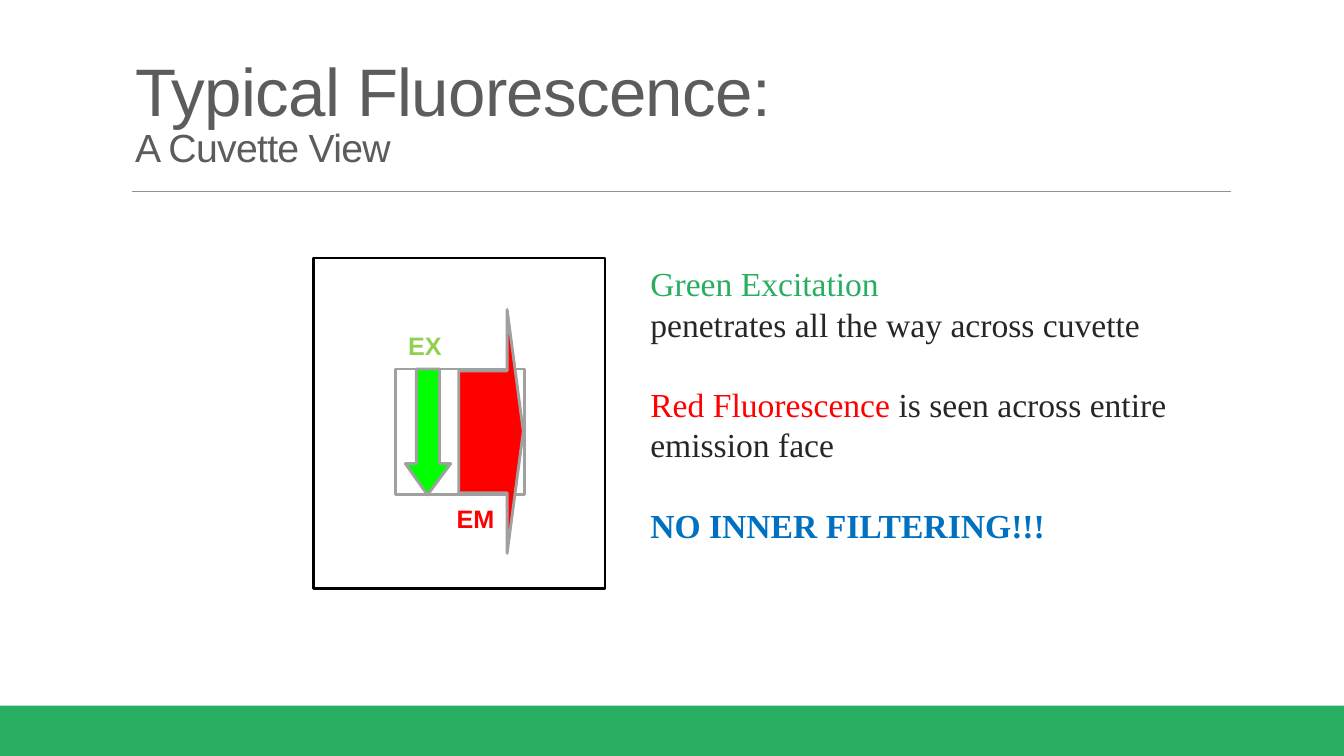
"""Build the cuvette slide on ordinary right-angle fluorescence."""
from dataclasses import dataclass

from lxml.etree import SubElement
from pptx import Presentation
from pptx.dml.color import RGBColor
from pptx.enum.shapes import MSO_CONNECTOR as Connector, MSO_SHAPE as Preset
from pptx.enum.text import MSO_ANCHOR as Anchor, MSO_AUTO_SIZE as AutoSize, PP_ALIGN as Align
from pptx.oxml.ns import qn
from pptx.util import Inches, Pt

SANS, SERIF = "Arial", "Times New Roman"
GREEN, RED, BLUE, INK = "27AE61", "FF0000", "0070C0", "262626"
TITLE_GREY, EDGE_GREY = "5C5C5C", "A0A0A0"
LINE_PITCH = 28.8


@dataclass
class Rect:
    left: float
    top: float
    width: float
    height: float

    def lengths(self) -> list:
        return [Inches(v) for v in (self.left, self.top, self.width, self.height)]


@dataclass
class Arrow:
    points: list[tuple[float, float]]
    fill: str


@dataclass
class Label:
    text: str
    left: float
    top: float
    color: str


@dataclass
class Span:
    text: str
    color: str = INK
    bold: bool = False


@dataclass
class Line:
    spans: list[Span]
    gap: float = 0


ARROWS = [
    Arrow([(4.02, 4.6), (4.13, 4.6), (4.13, 3.66), (4.36, 3.66),
           (4.36, 4.6), (4.47, 4.6), (4.24, 4.91)], "00FF00"),
    Arrow([(5.03, 5.49), (5.03, 4.89), (4.55, 4.89), (4.55, 3.68),
           (5.03, 3.68), (5.03, 3.07), (5.19, 4.28)], RED),
]
LABELS = [Label("EX", 3.95, 3.23, "92D050"), Label("EM", 4.43, 4.94, RED)]
LINES = [
    Line([Span("Green Excitation", GREEN)]),
    Line([Span("penetrates all the way across cuvette")]),
    Line([Span("Red Fluorescence", RED), Span(" is seen across entire")], LINE_PITCH),
    Line([Span("emission face")]),
    Line([Span("NO INNER FILTERING!!!", BLUE, True)], LINE_PITCH),
]


def rgb(color: str) -> RGBColor:
    return RGBColor.from_string(color)


def paint(shape, fill: str | None, edge: str | None) -> None:
    shape.shadow.inherit = False
    if fill:
        shape.fill.solid()
        shape.fill.fore_color.rgb = rgb(fill)
    else:
        shape.fill.background()
    if edge:
        shape.line.color.rgb = rgb(edge)
        shape.line.width = Pt(2)
    else:
        shape.line.fill.background()


def add_rect(shapes, rect: Rect, fill: str | None, edge: str | None) -> None:
    paint(shapes.add_shape(Preset.RECTANGLE, *rect.lengths()), fill, edge)


def add_arrow(shapes, arrow: Arrow) -> None:
    start, *rest = [(Inches(x), Inches(y)) for x, y in arrow.points]
    builder = shapes.build_freeform(*start)
    builder.add_line_segments(rest, close=True)
    paint(builder.convert_to_shape(), arrow.fill, EDGE_GREY)


def add_label(shapes, label: Label) -> None:
    box = shapes.add_textbox(*Rect(label.left, label.top, 0.75, 0.4).lengths())
    box.text_frame.word_wrap = True
    box.text_frame.auto_size = AutoSize.SHAPE_TO_FIT_TEXT
    para = box.text_frame.paragraphs[0]
    para.text = label.text
    set_font(para.font, SANS, 18, label.color)
    para.font.bold = True


def set_font(font, name: str, size: float, color: str) -> None:
    font.name, font.size = name, Pt(size)
    font.color.rgb = rgb(color)


def place(box, rect: Rect, anchor: Anchor):
    box.left, box.top, box.width, box.height = rect.lengths()
    frame = box.text_frame
    frame.word_wrap = True
    frame.auto_size = AutoSize.NONE
    frame.vertical_anchor = anchor
    return frame


def fill_title(box) -> None:
    para = place(box, Rect(1.24, 0.16, 11.45, 1.58), Anchor.BOTTOM).paragraphs[0]
    para.alignment = Align.LEFT
    para.line_spacing = 0.85
    set_font(para.font, SANS, 48, TITLE_GREY)
    for index, (text, size) in enumerate([("Typical Fluorescence:", 48), ("A Cuvette View", 28)]):
        if index:
            para.add_line_break()
        run = para.add_run()
        run.text = text
        run.font.size = Pt(size)
        run.font._element.set("spc", "-50")


def fill_body(box) -> None:
    frame = place(box, Rect(6.35, 2.56, 6.01, 3.28), Anchor.TOP)
    for index, line in enumerate(LINES):
        para = frame.add_paragraph() if index else frame.paragraphs[0]
        para.line_spacing = Pt(LINE_PITCH)
        para.space_before = Pt(line.gap)
        properties = para._p.get_or_add_pPr()
        properties.set("marL", str(Inches(0.38)))
        properties.set("indent", str(-Inches(0.38)))
        SubElement(properties, qn("a:buNone"))
        para.font.name, para.font.size = SERIF, Pt(24)
        for span in line.spans:
            run = para.add_run()
            run.text = span.text
            run.font.bold = span.bold
            run.font.color.rgb = rgb(span.color)


def add_rule(shapes) -> None:
    rule = shapes.add_connector(Connector.STRAIGHT, Inches(1.31), Inches(1.9),
                                Inches(12.21), Inches(1.9))
    rule.line.color.rgb = rgb("929292")
    rule.line.width = Pt(0.5)
    SubElement(rule._element.spPr, qn("a:effectLst"))


def main() -> None:
    deck = Presentation()
    deck.slide_width, deck.slide_height = Inches(13.33), Inches(7.5)
    page = deck.slides.add_slide(deck.slide_layouts[1])
    fill_title(page.shapes.title)
    fill_body(page.placeholders[1])
    add_rect(page.shapes, Rect(0, 7, 13.33, 0.5), GREEN, None)
    add_rule(page.shapes)
    add_rect(page.shapes, Rect(3.11, 2.56, 2.89, 3.28), None, "000000")
    cuvette = page.shapes.add_group_shape().shapes
    add_rect(cuvette, Rect(3.92, 3.66, 1.28, 1.25), "FFFFFF", EDGE_GREY)
    for arrow in ARROWS:
        add_arrow(cuvette, arrow)
    for label in LABELS:
        add_label(cuvette, label)
    deck.save("out.pptx")


if __name__ == "__main__":
    main()
